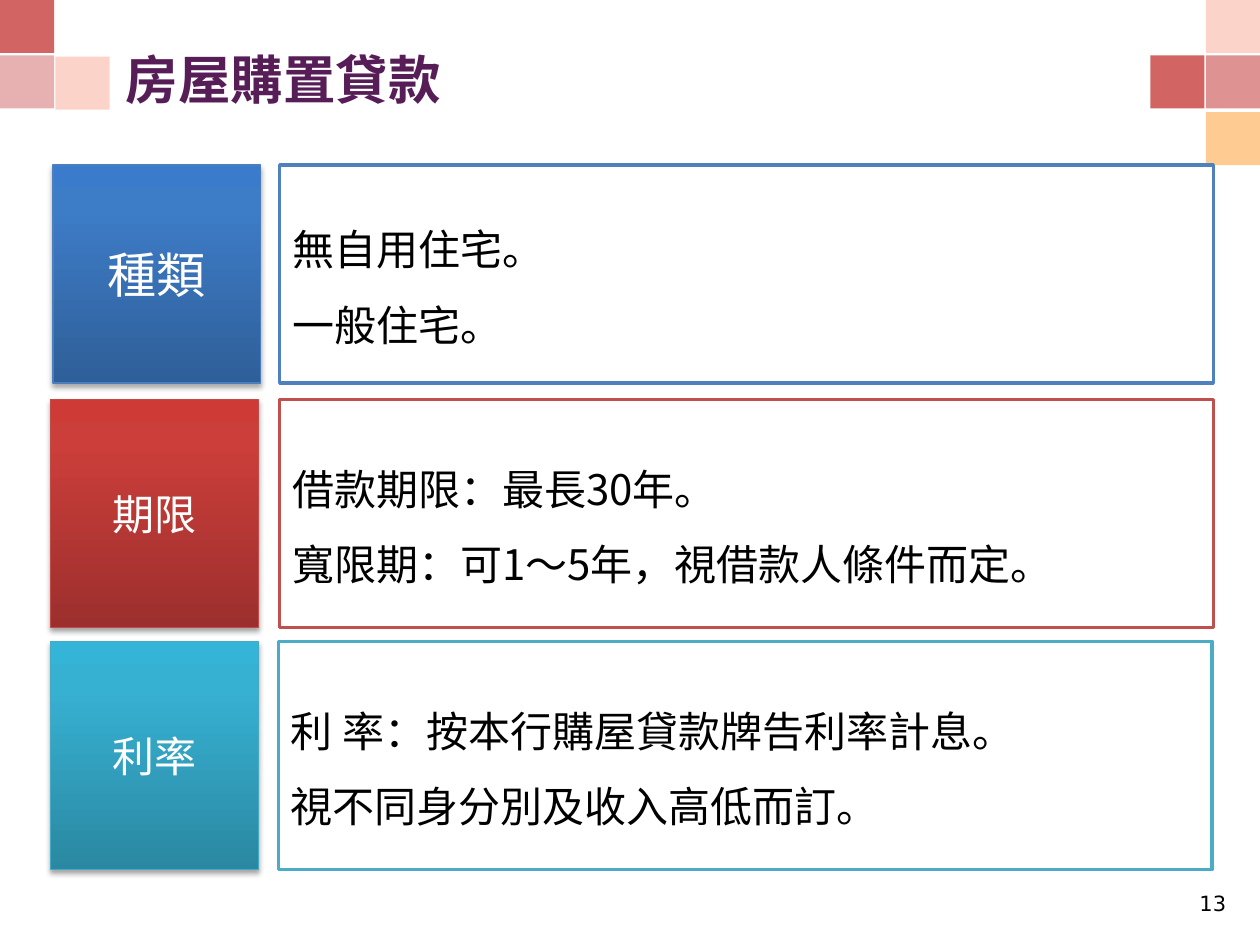
"""Build the home purchase loan slide with python-pptx."""
from dataclasses import dataclass

from lxml.etree import SubElement
from pptx import Presentation
from pptx.dml.color import RGBColor
from pptx.enum.shapes import MSO_SHAPE
from pptx.enum.text import MSO_ANCHOR, PP_ALIGN
from pptx.oxml.ns import qn
from pptx.util import Inches, Pt


@dataclass(frozen=True)
class Theme:
    font: str = "Noto Sans CJK SC"
    num_font: str = "DejaVu Sans"
    title: str = "571D57"
    text: str = "000000"
    white: str = "FFFFFF"
    rose: str = "D26464"
    peach: str = "FBA993"
    amber: str = "FEA94C"
    blue: tuple = ("2F5F99", "3D7CC7", "3A7CCB", "4B7EBC", "4F81BD")
    red: tuple = ("9C2F2D", "CB3E3A", "CE3B37", "BF4C48", "C0504D")
    teal: tuple = ("2A88A2", "37B1D2", "34B4D6", "46AAC5", "4BACC6")
    title_pt: int = 30
    large_pt: int = 28
    body_pt: int = 24
    num_pt: int = 12


THEME = Theme()

TILES = (
    (9.57, 0.89, THEME.amber, 60),
    (9.57, 0, THEME.peach, 50),
    (0.44, 0.45, THEME.peach, 50),
    (0, 0, THEME.rose, 100),
    (0, 0.44, THEME.rose, 50),
    (9.57, 0.44, THEME.rose, 70),
    (9.13, 0.44, THEME.rose, 100),
)

ROWS = (
    (0.42, 2.22, 1.31, 1.73, THEME.blue, "種類", THEME.large_pt,
     ("無自用住宅。", "一般住宅。")),
    (0.4, 2.22, 3.17, 1.81, THEME.red, "期限", THEME.body_pt,
     ("借款期限：最長30年。", "寬限期：可1～5年，視借款人條件而定。")),
    (0.4, 2.21, 5.09, 1.81, THEME.teal, "利率", THEME.body_pt,
     ("利 率：按本行購屋貸款牌告利率計息。", "視不同身分別及收入高低而訂。")),
)


def add_rect(slide, left, top, width, height):
    """Add a plain rectangle without shadow."""
    rect = slide.shapes.add_shape(
        MSO_SHAPE.RECTANGLE, Inches(left), Inches(top), Inches(width), Inches(height))
    rect.shadow.inherit = False
    return rect


def fill_flat(shape, color, alpha=100):
    """Fill a shape with one color, opaque or see-through."""
    shape.fill.solid()
    shape.fill.fore_color.rgb = RGBColor.from_string(color)
    if alpha < 100:
        node = shape.fill._xPr.find(qn("a:solidFill"))[0]
        SubElement(node, qn("a:alpha"), val=str(alpha * 1000))


def fill_grade(shape, colors):
    """Fill a shape with a gradient rising from the bottom."""
    shape.fill.gradient()
    shape.fill.gradient_angle = 90
    stops = shape.fill._xPr.find(qn("a:gradFill")).find(qn("a:gsLst"))
    stops[:] = []
    for place, color in zip((0, 80, 100), colors):
        stop = SubElement(stops, qn("a:gs"), pos=str(place * 1000))
        SubElement(stop, qn("a:srgbClr"), val=color)


def set_line(shape, color, width):
    """Outline a shape."""
    shape.line.color.rgb = RGBColor.from_string(color)
    shape.line.width = Pt(width)


def cast_shade(shape):
    """Give a shape a soft shadow below it."""
    effects = shape._element.spPr.find(qn("a:effectLst"))
    shade = SubElement(
        effects, qn("a:outerShdw"), blurRad=str(Pt(3.1)), dist=str(Pt(1.8)),
        dir="5400000", rotWithShape="0")
    color = SubElement(shade, qn("a:srgbClr"), val=THEME.text)
    SubElement(color, qn("a:alpha"), val="35000")


def write(shape, lines, size, color, align=PP_ALIGN.LEFT, anchor=MSO_ANCHOR.MIDDLE,
          font=THEME.font, bold=False, space=1.0):
    """Write lines of text into a shape."""
    frame = shape.text_frame
    frame.word_wrap = True
    frame.vertical_anchor = anchor
    frame.text = "\n".join(lines)
    for para in frame.paragraphs:
        para.alignment = align
        para.line_spacing = space
        para.font.size = Pt(size)
        para.font.bold = bold
        para.font.color.rgb = RGBColor.from_string(color)
        para.font.name = font
        props = para._p.pPr.find(qn("a:defRPr"))
        SubElement(props, qn("a:ea"), typeface=font)


def add_label(slide, left, top, width, height, text, size, color, **style):
    """Add a free line of text."""
    box = slide.shapes.add_textbox(
        Inches(left), Inches(top), Inches(width), Inches(height))
    write(box, [text], size, color, **style)


def add_tile(slide, left, top, color, alpha):
    """Add one square of the corner pattern."""
    tile = add_rect(slide, left, top, 0.43, 0.42)
    fill_flat(tile, color, alpha)
    tile.line.fill.background()


def add_row(slide, left, inner, top, height, colors, head, size, lines):
    """Add a heading block and its framed details."""
    *grade, edge, frame = colors
    block = add_rect(slide, left, top, 1.65, height)
    fill_grade(block, grade)
    set_line(block, edge, 0.75)
    cast_shade(block)
    write(block, [head], size, THEME.white, align=PP_ALIGN.CENTER)
    panel = add_rect(slide, inner, top, 7.41, height)
    fill_flat(panel, THEME.white)
    set_line(panel, frame, 2)
    write(panel, lines, THEME.body_pt, THEME.text, space=1.5)


def main():
    """Build and save the slide."""
    deck = Presentation()
    deck.slide_width, deck.slide_height = Inches(10), Inches(7.5)
    slide = deck.slides.add_slide(deck.slide_layouts[6])
    for tile in TILES:
        add_tile(slide, *tile)
    add_label(slide, 0.9, 0.31, 8.1, 0.62, "房屋購置貸款",
              THEME.title_pt, THEME.title, bold=True)
    for row in ROWS:
        add_row(slide, *row)
    add_label(slide, 9.33, 7.02, 0.5, 0.35, "13", THEME.num_pt, THEME.text,
              align=PP_ALIGN.RIGHT, anchor=MSO_ANCHOR.TOP, font=THEME.num_font)
    deck.save("out.pptx")


if __name__ == "__main__":
    main()
